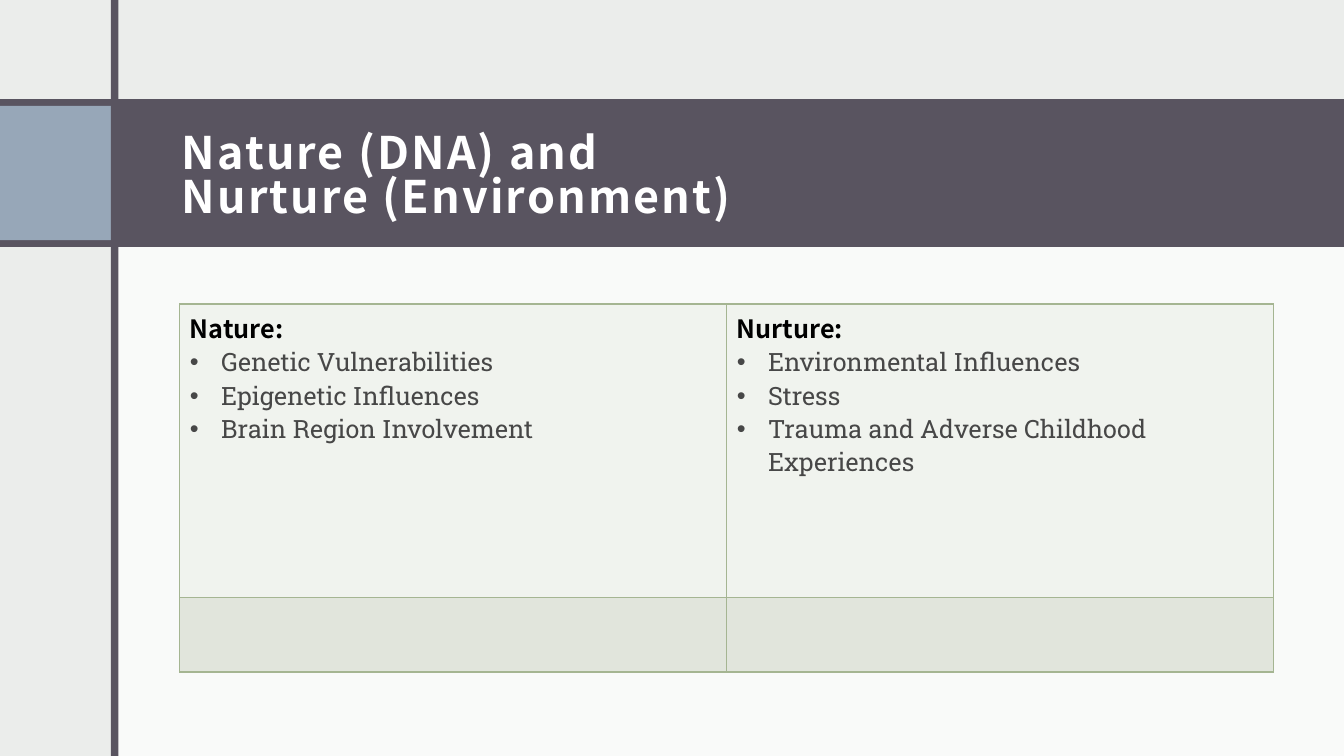
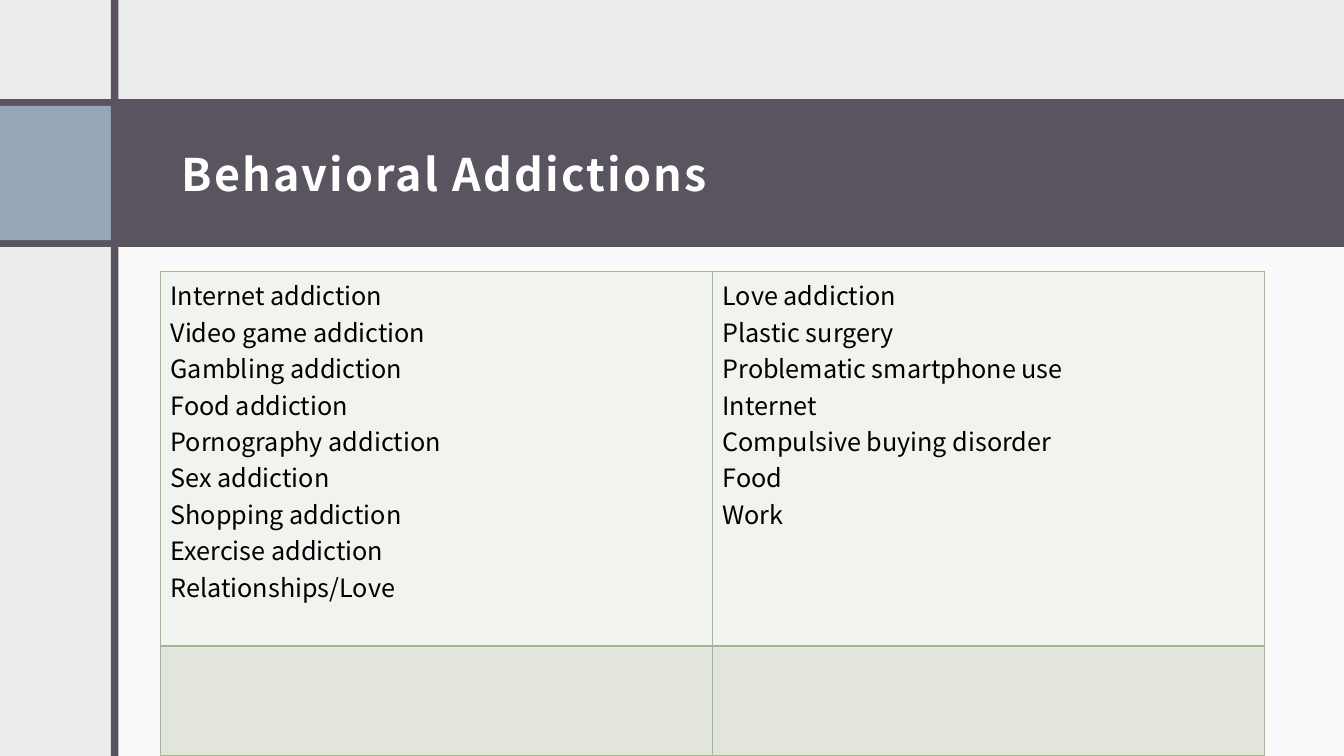
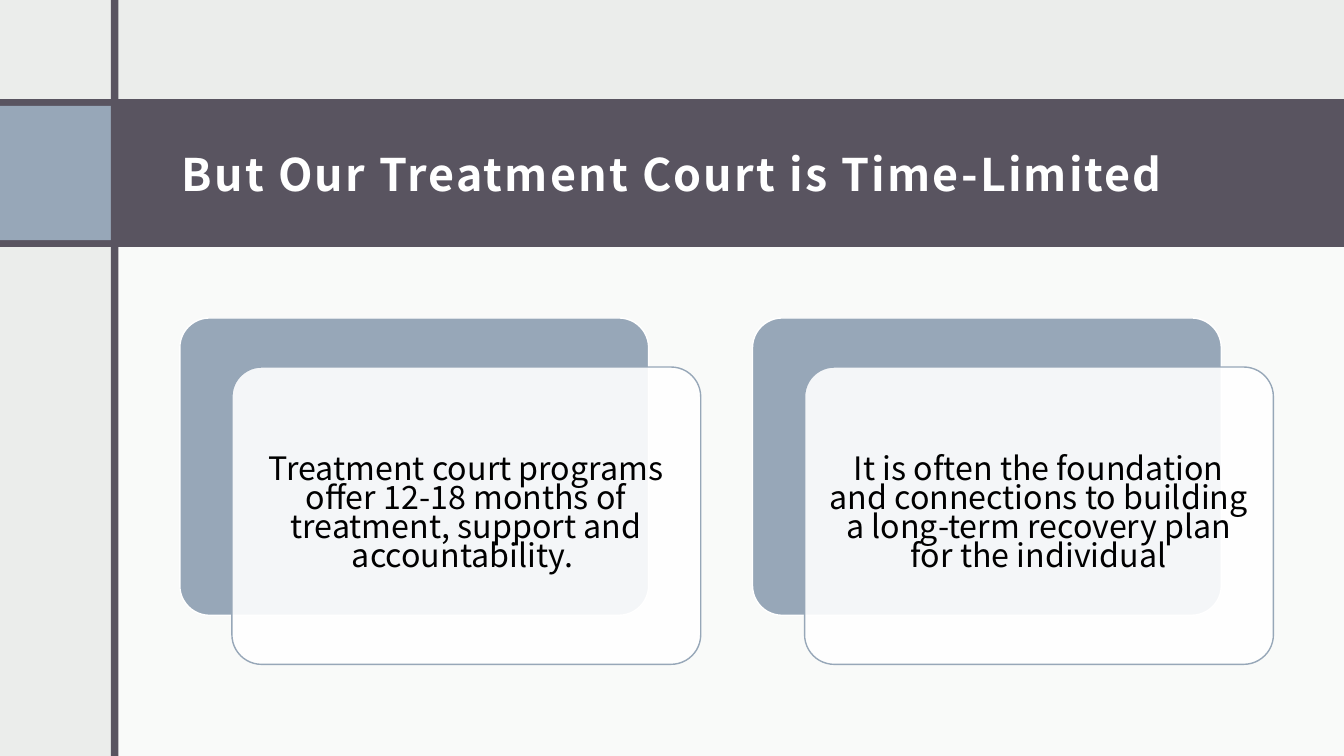
from lxml import etree
from pptx import Presentation
from pptx.dml.color import RGBColor
from pptx.enum.shapes import MSO_SHAPE
from pptx.enum.text import MSO_ANCHOR, PP_ALIGN
from pptx.oxml.ns import qn
from pptx.util import Emu, Inches, Pt

RECT = MSO_SHAPE.RECTANGLE
ROUND = MSO_SHAPE.ROUNDED_RECTANGLE
MIDDLE = MSO_ANCHOR.MIDDLE
CENTER = PP_ALIGN.CENTER

COLS, ROWS = 160, 90
SANS, SLAB = "Noto Sans CJK JP", "Roboto Slab"
BACK, DARK, BLUE, WHITE = "EBEDEB", "595460", "97A7B8", "FFFFFF"
EDGE, PALE, SAGE = "A5B592", "F0F3EE", "E1E5DC"

HEAD = dict(name=SANS, size=Pt(32), bold=True, color=WHITE)
LABEL = dict(name=SANS, size=Pt(18), bold=True, color="000000")
PLAIN = dict(LABEL, bold=False)
ITEM = dict(name=SLAB, size=Pt(18), bold=False, color="474747")
NOTE = dict(PLAIN, size=Pt(23))


def paint(hue):
    return RGBColor.from_string(hue)


class Deck:
    """Draw slides in one style on a grid of square cells."""

    def __init__(self):
        self.file = Presentation()
        self.file.slide_width = Inches(13.33)
        self.file.slide_height = Inches(7.5)
        self.unit = self.file.slide_height / ROWS

    def span(self, *cells):
        return [Emu(round(cell * self.unit)) for cell in cells]

    def page(self, title):
        self.slide = self.file.slides.add_slide(self.file.slide_layouts[6])
        fill = self.slide.background.fill
        fill.solid()
        fill.fore_color.rgb = paint(BACK)
        self.block(13.7, 28, COLS - 13.7, ROWS - 28, WHITE, alpha=75)
        self.block(0, 11.8, COLS, 17.6, DARK)
        self.block(0, 12.6, 13.2, 16, BLUE)
        self.block(13.2, 0, 0.9, ROWS, DARK)
        self.title(title)

    def block(self, x, y, wide, high, hue, kind=RECT, line=None, alpha=None):
        shape = self.slide.shapes.add_shape(kind, *self.span(x, y, wide, high))
        shape.shadow.inherit = False
        shape.fill.solid()
        shape.fill.fore_color.rgb = paint(hue)
        if alpha:
            tint = shape.fill._xPr.find(qn("a:solidFill"))[0]
            etree.SubElement(tint, qn("a:alpha"), val=str(alpha * 1000))
        if line:
            shape.line.color.rgb = paint(line)
            shape.line.width = Pt(1)
        else:
            shape.line.fill.background()
        return shape

    def frame(self, frame, left, top, right, low):
        form = dict(word_wrap=True, vertical_anchor=MIDDLE,
                    margin_left=Inches(left), margin_top=Inches(top),
                    margin_right=Inches(right), margin_bottom=Inches(low))
        for key, value in form.items():
            setattr(frame, key, value)
        return frame.paragraphs[0]

    def words(self, para, text, form, space=None):
        para.text = text
        for run in para.runs:
            for key, value in form.items():
                if key == "color":
                    run.font.color.rgb = paint(value)
                else:
                    setattr(run.font, key, value)
            if space:
                run._r.get_or_add_rPr().set("spc", str(space))

    def title(self, text):
        box = self.slide.shapes.add_textbox(*self.span(20.2, 12.6, 131.4, 16))
        para = self.frame(box.text_frame, 0.12, 0.1, 0.12, 0)
        para.line_spacing = 0.82
        self.words(para, text, HEAD, space=150)

    def dot(self, para):
        props = para._p.get_or_add_pPr()
        step = Inches(0.31)
        props.set("marL", str(step))
        props.set("indent", str(-step))
        etree.SubElement(props, qn("a:buFont"), typeface="Arial")
        etree.SubElement(props, qn("a:buChar"), char="•")

    def edge(self, cell):
        props = cell._tc.get_or_add_tcPr()
        for side in ("lnL", "lnR", "lnT", "lnB"):
            line = etree.SubElement(props, qn("a:" + side), w=str(Pt(1)))
            fill = etree.SubElement(line, qn("a:solidFill"))
            etree.SubElement(fill, qn("a:srgbClr"), val=EDGE)

    def table(self, x, y, wide, highs, lists):
        grid = self.slide.shapes.add_table(
            len(highs), len(lists), *self.span(x, y, wide, sum(highs))).table
        grid.first_row = grid.horz_banding = False
        for row, high in zip(grid.rows, self.span(*highs)):
            row.height = high
        for cell in grid.iter_cells():
            self.edge(cell)
            cell.fill.solid()
            cell.fill.fore_color.rgb = paint(SAGE)
        for col, lines in enumerate(lists):
            cell = grid.cell(0, col)
            cell.fill.fore_color.rgb = paint(PALE)
            frame = cell.text_frame
            for num, (text, form) in enumerate(lines):
                para = frame.add_paragraph() if num else frame.paragraphs[0]
                self.words(para, text, form)
                if form is ITEM:
                    self.dot(para)

    def card(self, x, y, text):
        wide, high = 55.8, 35.4
        rear = self.block(x, y, wide, high, BLUE, ROUND, WHITE)
        front = self.block(x + 6.2, y + 5.84, wide, high, WHITE, ROUND, BLUE, 90)
        for shape in (rear, front):
            shape.adjustments[0] = 0.1
        para = self.frame(front.text_frame, 0.1, 0.1, 0.1, 0.1)
        para.alignment = CENTER
        para.line_spacing = 0.75
        self.words(para, text, NOTE)


def topic(head, *items):
    return [(head, LABEL)] + [(item, ITEM) for item in items]


def plain(*items):
    return [(item, PLAIN) for item in items]


def main():
    deck = Deck()

    deck.page("Nature (DNA) and\nNurture (Environment)")
    deck.table(21.4, 36.2, 130.2, (34.9, 8.9), [
        topic("Nature:", "Genetic Vulnerabilities", "Epigenetic Influences",
              "Brain Region Involvement"),
        topic("Nurture:", "Environmental Influences", "Stress",
              "Trauma and Adverse Childhood Experiences")])

    deck.page("Behavioral Addictions")
    deck.table(19.1, 32.3, 131.4, (44.6, 13.1), [
        plain("Internet addiction", "Video game addiction",
              "Gambling addiction", "Food addiction",
              "Pornography addiction", "Sex addiction", "Shopping addiction",
              "Exercise addiction", "Relationships/Love"),
        plain("Love addiction", "Plastic surgery",
              "Problematic smartphone use", "Internet",
              "Compulsive buying disorder", "Food", "Work")])

    deck.page("But Our Treatment Court is Time-Limited")
    notes = ("Treatment court programs offer 12-18 months of treatment, "
             "support and accountability. ",
             "It is often the foundation and connections to building "
             "a long-term recovery plan for the individual")
    for num, note in enumerate(notes):
        deck.card(21.4 + 68.16 * num, 37.85, note)

    deck.file.save("out.pptx")


if __name__ == "__main__":
    main()
